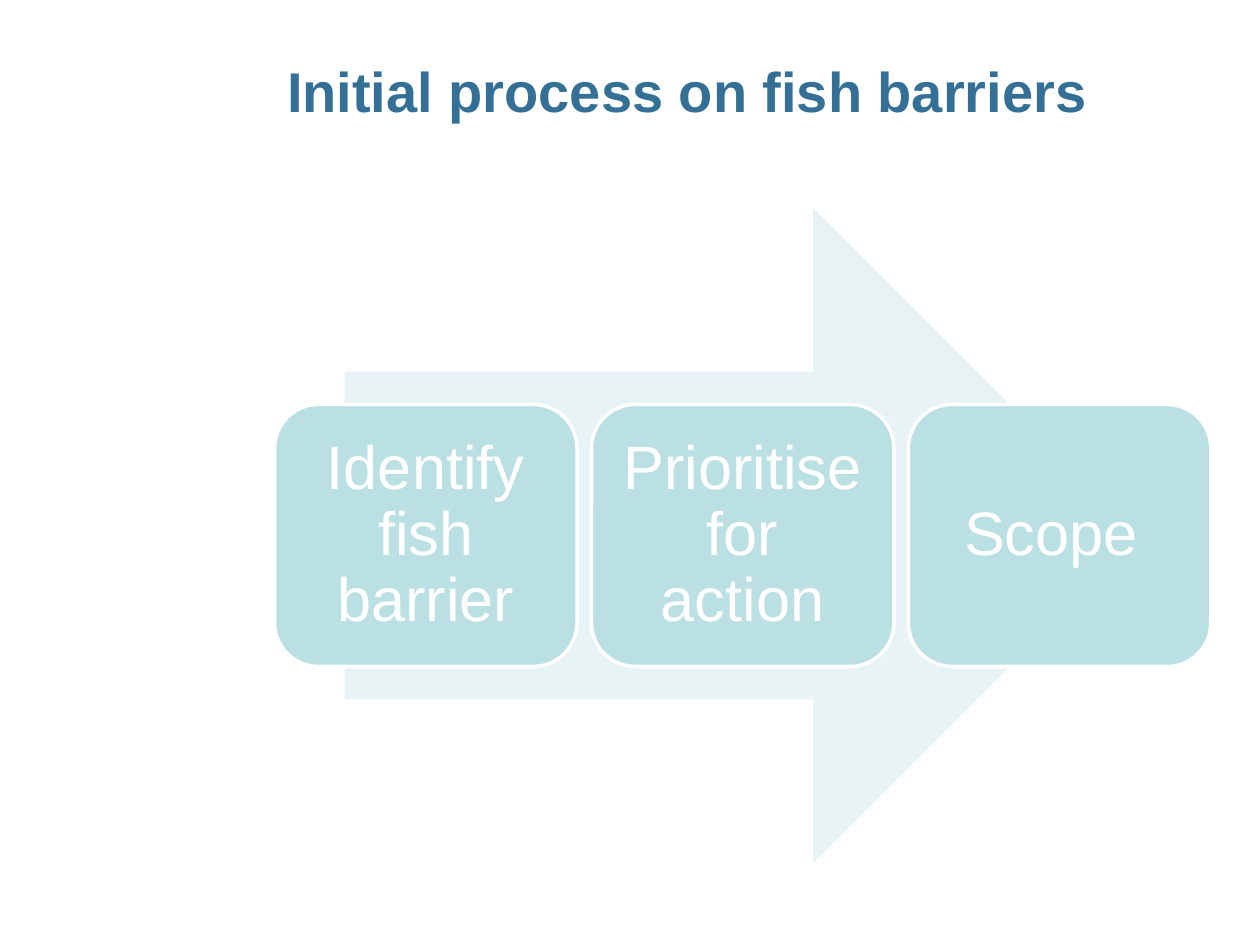
import pptx
import pptx.util
import pptx.dml.color
import pptx.enum.shapes
import pptx.enum.text

Inches, Pt = pptx.util.Inches, pptx.util.Pt
RGBColor = pptx.dml.color.RGBColor
MSO_SHAPE = pptx.enum.shapes.MSO_SHAPE
PP_ALIGN = pptx.enum.text.PP_ALIGN
MSO_ANCHOR = pptx.enum.text.MSO_ANCHOR

TITLE_BLUE = RGBColor(0x34, 0x70, 0x95)
ARROW_TINT = RGBColor(0xE7, 0xF3, 0xF4)
STEP_TEAL = RGBColor(0xBB, 0xE0, 0xE3)
WHITE = RGBColor(0xFF, 0xFF, 0xFF)

# Content grid, in inches
LEFT, WIDTH = 2.18, 7.43
MIDDLE = 4.25
STEP_W, STEP_H = 2.4, 2.08
ARROW_SHARE, ARROW_H = 0.85, 5.2
STEPS = ["Identify fish barrier", "Prioritise for action", "Scope "]


def style_runs(p, size, color, bold=False):
    for r in p.runs:
        r.font.name = "Arial"
        r.font.size = Pt(size)
        r.font.bold = bold
        r.font.color.rgb = color


def add_title(s, text):
    tf = s.shapes.add_textbox(Inches(LEFT), Inches(0.4),
                              Inches(WIDTH), Inches(1.06)).text_frame
    tf.word_wrap = True
    tf.text = text
    style_runs(tf.paragraphs[0], 32, TITLE_BLUE, bold=True)


def add_block(s, kind, left, width, height, fill):
    """Add a filled shape centred on the middle line of the process."""
    sp = s.shapes.add_shape(kind, Inches(left), Inches(MIDDLE - height / 2),
                            Inches(width), Inches(height))
    sp.shadow.inherit = False
    sp.fill.solid()
    sp.fill.fore_color.rgb = fill
    sp.line.fill.background()
    return sp


def add_step(s, left, text):
    sp = add_block(s, MSO_SHAPE.ROUNDED_RECTANGLE, left, STEP_W, STEP_H, STEP_TEAL)
    sp.line.color.rgb = WHITE
    sp.line.width = Pt(2)
    tf = sp.text_frame
    tf.word_wrap = True
    tf.vertical_anchor = MSO_ANCHOR.MIDDLE
    tf.margin_left = tf.margin_right = Inches(0.14)
    tf.margin_top = tf.margin_bottom = Inches(0.15)
    tf.text = text
    p = tf.paragraphs[0]
    p.alignment = PP_ALIGN.CENTER
    p.line_spacing = 0.9
    style_runs(p, 35, WHITE)


def main():
    prs = pptx.Presentation()
    prs.slide_width, prs.slide_height = Inches(10), Inches(7.5)
    s = prs.slides.add_slide(prs.slide_layouts[6])

    add_title(s, "Initial process on fish barriers")

    # Background arrow, centred across the content width
    arrow_w = WIDTH * ARROW_SHARE
    add_block(s, MSO_SHAPE.RIGHT_ARROW, LEFT + (WIDTH - arrow_w) / 2,
              arrow_w, ARROW_H, ARROW_TINT)

    # Process steps, spread evenly from edge to edge
    pitch = (WIDTH - STEP_W) / (len(STEPS) - 1)
    for i, text in enumerate(STEPS):
        add_step(s, LEFT + i * pitch, text)

    prs.save("out.pptx")


if __name__ == "__main__":
    main()
